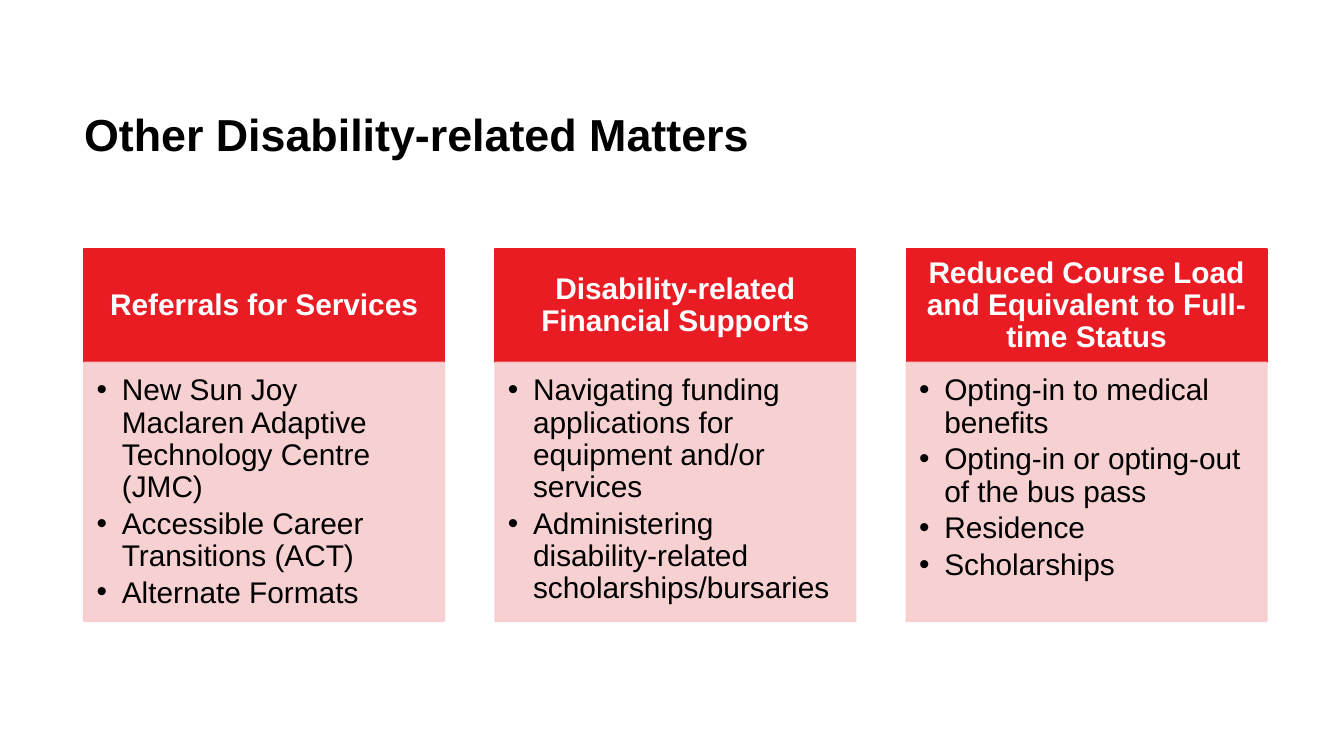
from lxml import etree
from pptx import Presentation
from pptx import util as u
from pptx.dml.color import RGBColor
from pptx.enum import shapes, text
from pptx.oxml.ns import qn

Pt = u.Pt
RED = RGBColor(0xE9, 0x1C, 0x24)
PINK = RGBColor(0xF7, 0xCD, 0xCD)
WHITE = RGBColor(0xFF, 0xFF, 0xFF)
BLACK = RGBColor(0, 0, 0)

LEFT, COLUMN_WIDTH, COLUMN_STEP = 45, 193, 220.3
HEADER_TOP, HEADER_HEIGHT = 133.4, 60.8
LIST_TOP, LIST_HEIGHT = 194.2, 138.6

COLUMNS = [
    ("Referrals for Services",
     ["New Sun Joy Maclaren Adaptive Technology Centre (JMC)",
      "Accessible Career Transitions (ACT)",
      "Alternate Formats"]),
    ("Disability-related Financial Supports",
     ["Navigating funding applications for equipment and/or services",
      "Administering disability-related scholarships/bursaries"]),
    ("Reduced Course Load and Equivalent to Full-time Status",
     ["Opting-in to medical benefits",
      "Opting-in or opting-out of the bus pass",
      "Residence",
      "Scholarships"]),
]


def write(box, lines, size=16, color=BLACK, bold=False, align=text.PP_ALIGN.LEFT,
          anchor=text.MSO_ANCHOR.TOP, insets=(0, 0, 0, 0), after=0, bullet=False):
    frame = box.text_frame
    frame.word_wrap = True
    frame.auto_size = text.MSO_AUTO_SIZE.NONE
    frame.vertical_anchor = anchor
    (frame.margin_left, frame.margin_top,
     frame.margin_right, frame.margin_bottom) = map(Pt, insets)
    for number, line in enumerate(lines):
        para = frame.add_paragraph() if number else frame.paragraphs[0]
        para.alignment = align
        para.line_spacing = 0.9
        para.space_before = Pt(0)
        para.space_after = Pt(after)
        if bullet:
            para.level = 1
            properties = para._p.get_or_add_pPr()
            properties.set("marL", str(Pt(13.5)))
            properties.set("indent", str(-Pt(13.5)))
            etree.SubElement(properties, qn("a:buFont")).set("typeface", "Arial")
            etree.SubElement(properties, qn("a:buChar")).set("char", "•")
        span = para.add_run()
        span.text = line
        span.font.name = "Arial"
        span.font.size = Pt(size)
        span.font.bold = bold
        span.font.color.rgb = color


def add_panel(page, left, top, height, color, opacity=100):
    panel = page.shapes.add_shape(shapes.MSO_SHAPE.RECTANGLE, Pt(left), Pt(top),
                                  Pt(COLUMN_WIDTH), Pt(height))
    panel.shadow.inherit = False
    panel.line.width = Pt(1)
    for fill in (panel.fill, panel.line.fill):
        fill.solid()
        fill.fore_color.rgb = color
    if opacity < 100:
        for tint in panel._element.spPr.iter(qn("a:srgbClr")):
            etree.SubElement(tint, qn("a:alpha")).set("val", str(opacity * 1000))
    return panel


deck = Presentation()
deck.slide_width, deck.slide_height = Pt(720), Pt(405)
page = deck.slides.add_slide(deck.slide_layouts[5])

# Title
title = page.shapes.title
title.left, title.top, title.width, title.height = Pt(45), Pt(60.5), Pt(634), Pt(57)
write(title, ["Other Disability-related Matters"], size=24, bold=True)

# Three columns: red header above a pink list
for index, (heading, items) in enumerate(COLUMNS):
    left = LEFT + index * COLUMN_STEP
    header = add_panel(page, left, HEADER_TOP, HEADER_HEIGHT, RED)
    write(header, [heading], color=WHITE, bold=True, align=text.PP_ALIGN.CENTER,
          anchor=text.MSO_ANCHOR.MIDDLE, insets=(9, 5, 9, 5))
    body = add_panel(page, left, LIST_TOP, LIST_HEIGHT, PINK, opacity=90)
    write(body, items, insets=(6.8, 6.8, 9, 10), after=2.4, bullet=True)

deck.save("out.pptx")
